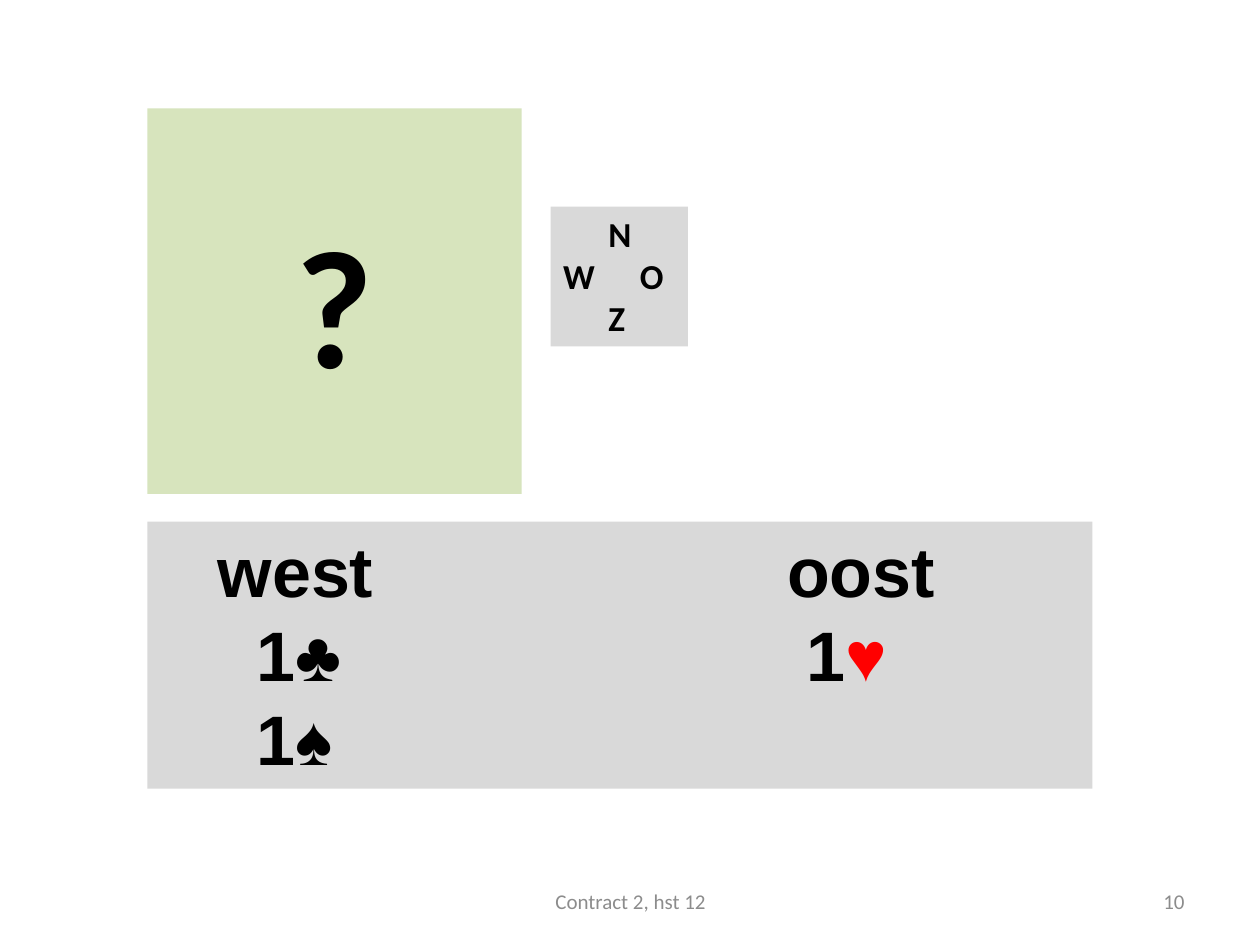
"""Build a bridge bidding slide with a hand, a compass and an auction."""
from dataclasses import dataclass

import pptx
import pptx.dml.color
import pptx.enum.shapes
import pptx.enum.text
import pptx.oxml
import pptx.oxml.ns
import pptx.util

Inches = pptx.util.Inches
Align = pptx.enum.text.PP_ALIGN
Anchor = pptx.enum.text.MSO_ANCHOR


@dataclass
class Span:
    text: str
    color: str = "000000"


@dataclass
class Line:
    spans: list[Span]
    stops: tuple[float, ...] = ()


@dataclass
class Panel:
    place: tuple[float, float, float, float]
    lines: list[Line]
    size: int
    font: str = "Calibri"
    bold: bool = True
    fill: str | None = None
    align: Align = Align.LEFT
    anchor: Anchor = Anchor.TOP


def rgb(value: str) -> pptx.dml.color.RGBColor:
    """Turn a hex string into a colour."""
    return pptx.dml.color.RGBColor.from_string(value)


def set_stops(para, stops: tuple[float, ...]) -> None:
    """Give a paragraph left tab stops, in inches."""
    tabs = pptx.oxml.parse_xml(f"<a:tabLst {pptx.oxml.ns.nsdecls('a')}/>")
    for stop in stops:
        tab = tabs.makeelement(pptx.oxml.ns.qn("a:tab"), {"pos": str(Inches(stop)), "algn": "l"})
        tabs.append(tab)
    para._p.get_or_add_pPr().append(tabs)


def add_panel(page, panel: Panel) -> None:
    """Draw a filled rectangle or a plain text box with its lines."""
    place = [Inches(length) for length in panel.place]
    if panel.fill:
        box = page.shapes.add_shape(pptx.enum.shapes.MSO_SHAPE.RECTANGLE, *place)
        box.shadow.inherit = False
        box.fill.solid()
        box.fill.fore_color.rgb = rgb(panel.fill)
        box.line.fill.background()
    else:
        box = page.shapes.add_textbox(*place)
    frame = box.text_frame
    frame.word_wrap = True
    frame.vertical_anchor = panel.anchor
    for index, line in enumerate(panel.lines):
        para = frame.add_paragraph() if index else frame.paragraphs[0]
        para.alignment = panel.align
        if line.stops:
            set_stops(para, line.stops)
        for span in line.spans:
            run = para.add_run()
            run.text = span.text
            run.font.name = panel.font
            run.font.size = pptx.util.Pt(panel.size)
            run.font.bold = panel.bold
            run.font.color.rgb = rgb(span.color)


def main() -> None:
    """Assemble and save the deck."""
    gray, muted = "D9D9D9", "8C8C8C"
    middle, west, bid_west, bid_east = 0.36, 0.46, 0.77, 5.13
    panels = [
        Panel((1.17, 0.86, 2.97, 3.06), [Line([Span("?")])], 96,
              fill="D7E4BD", align=Align.CENTER, anchor=Anchor.MIDDLE),
        Panel((4.37, 1.64, 1.09, 1.11), [
            Line([Span("\tN")], (middle,)),
            Line([Span("W\tO")], (0.61,)),
            Line([Span("\tZ")], (middle,)),
        ], 20, fill=gray),
        Panel((1.17, 4.14, 7.5, 2.12), [
            Line([Span("\twest\toost")], (west, 4.98)),
            Line([Span("\t1♣\t1"), Span("♥", "FF0000")], (bid_west, bid_east)),
            Line([Span("\t1♠")], (bid_west,)),
        ], 40, font="Arial", fill=gray),
        Panel((7.17, 6.95, 2.33, 0.4), [Line([Span("10", muted)])], 12,
              bold=False, align=Align.RIGHT, anchor=Anchor.MIDDLE),
        Panel((3.42, 6.95, 3.17, 0.4), [Line([Span("Contract 2, hst 12", muted)])], 12,
              bold=False, align=Align.CENTER, anchor=Anchor.MIDDLE),
    ]
    deck = pptx.Presentation()
    deck.slide_width, deck.slide_height = Inches(10), Inches(7.5)
    page = deck.slides.add_slide(deck.slide_layouts[6])
    for panel in panels:
        add_panel(page, panel)
    deck.save("out.pptx")


if __name__ == "__main__":
    main()
